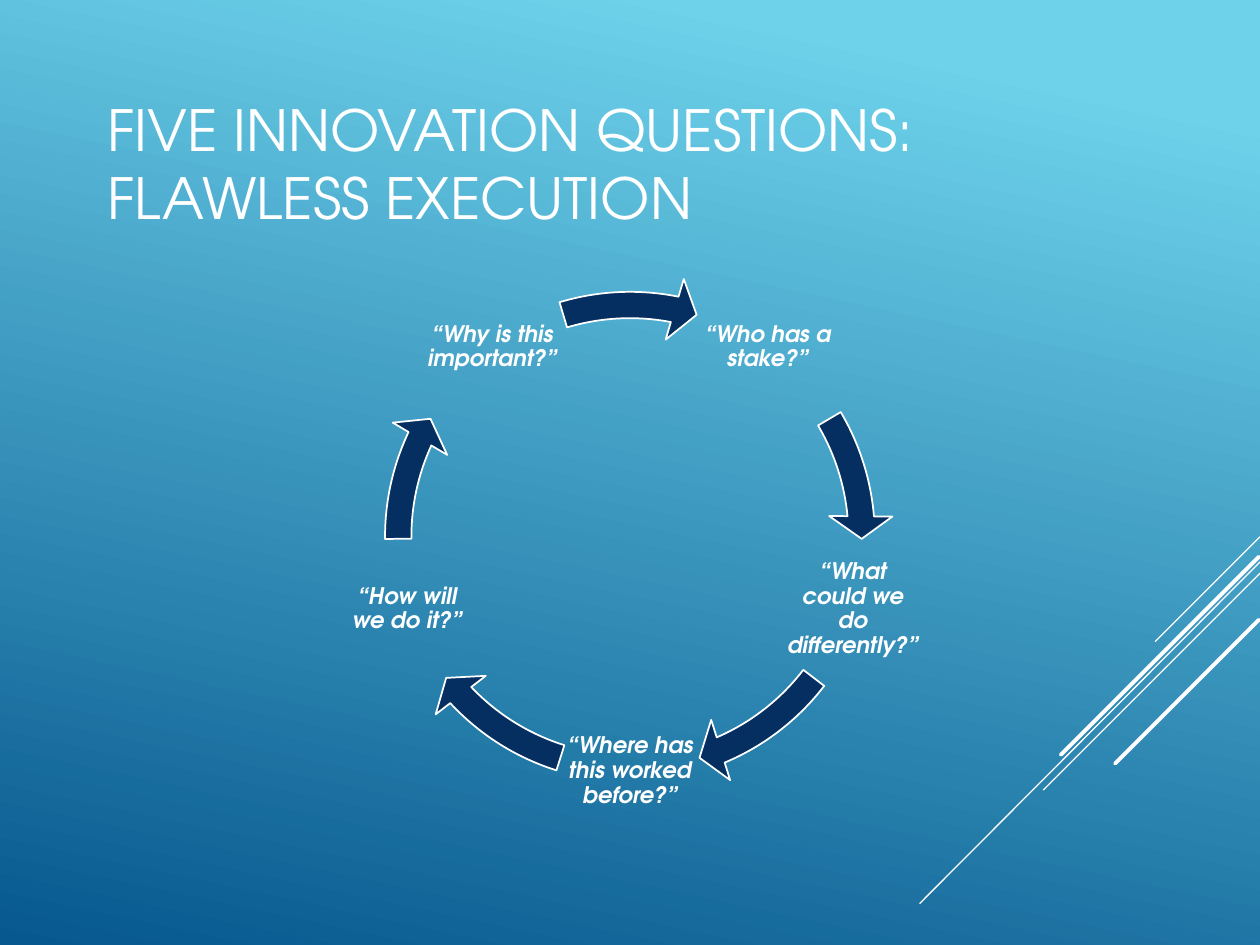
"""Build a slide showing five innovation questions as a clockwise cycle."""
from dataclasses import dataclass
from math import cos, radians, sin

from lxml.etree import SubElement
from pptx import Presentation
from pptx.dml.color import RGBColor
from pptx.enum.shapes import MSO_CONNECTOR, MSO_SHAPE
from pptx.enum.text import MSO_ANCHOR, MSO_AUTO_SIZE, PP_ALIGN
from pptx.oxml.ns import qn
from pptx.util import Inches, Pt


@dataclass(frozen=True)
class Theme:
    font: str = "TeX Gyre Adventor"
    white: RGBColor = RGBColor.from_string("FFFFFF")
    navy: RGBColor = RGBColor.from_string("052F61")
    sky: RGBColor = RGBColor.from_string("6ED2EB")
    ocean: RGBColor = RGBColor.from_string("06588E")
    title_size: float = 32.4
    question_size: float = 13


THEME = Theme()
TITLE = "FIVE INNOVATION QUESTIONS: FLAWLESS EXECUTION"
QUESTIONS = [
    ("“Who has a stake?”", 212.96, 197.64),
    ("“What could we do differently?”", 40.17, 22.51),
    ("“Where has this worked before?”", 82.14, 64.48),
    ("“How will we do it?”", 123.01, 107.69),
    ("“Why is this important?”", 168.68, 151.97),
]
ACCENT_LINES = [
    ((10, 4.26), (9.17, 5.09), 0.75),
    ((10, 4.46), (7.3, 7.17), 0.75),
    ((10, 4.55), (8.28, 6.27), 0.75),
    ((9.99, 4.42), (8.42, 5.99), 2.25),
    ((9.99, 4.92), (8.85, 6.06), 2.25),
]
CENTER_X, CENTER_Y = 5, 4.26
QUESTION_RADIUS, QUESTION_SIDE = 1.86, 1.11
ARROW_SIDE = 4.18
ARROW_THICKNESS, ARROW_HEAD_ANGLE, ARROW_HEAD_WIDTH = 0.05, 3.35, 0.06


def square(center_x, center_y, side):
    return [Inches(value) for value in (center_x - side / 2, center_y - side / 2, side, side)]


def style_text(paragraph, size, emphasis=False):
    for run in paragraph.runs:
        run.font.name = THEME.font
        run.font.size = Pt(size)
        run.font.color.rgb = THEME.white
        run.font.bold = run.font.italic = emphasis


def paint_background(slide):
    fill = slide.background.fill
    fill.gradient()
    fill.gradient_angle = 360 - 102
    for stop, color, position in zip(fill.gradient_stops, (THEME.sky, THEME.ocean), (0.1, 1)):
        stop.color.rgb = color
        stop.position = position


def add_accent_line(slide, start, end, width):
    points = [Inches(value) for value in (*start, *end)]
    connector = slide.shapes.add_connector(MSO_CONNECTOR.STRAIGHT, *points)
    connector.line.color.rgb = THEME.white
    connector.line.width = Pt(width)
    connector.line._get_or_add_ln().set("cap", "rnd")
    SubElement(connector._element.spPr, qn("a:effectLst"))


def write_title(slide):
    title = slide.shapes.title
    title.left, title.top, title.width, title.height = map(Inches, (0.75, 0.67, 8.5, 1.25))
    text_frame = title.text_frame
    text_frame.text = TITLE
    text_frame.auto_size = MSO_AUTO_SIZE.NONE
    text_frame.vertical_anchor = MSO_ANCHOR.MIDDLE
    text_frame.paragraphs[0].alignment = PP_ALIGN.LEFT
    style_text(text_frame.paragraphs[0], THEME.title_size)


def add_question(slide, text, angle):
    center_x = CENTER_X + QUESTION_RADIUS * sin(radians(angle))
    center_y = CENTER_Y - QUESTION_RADIUS * cos(radians(angle))
    text_frame = slide.shapes.add_textbox(*square(center_x, center_y, QUESTION_SIDE)).text_frame
    text_frame.text = text
    text_frame.word_wrap = True
    text_frame.vertical_anchor = MSO_ANCHOR.MIDDLE
    text_frame.margin_left = text_frame.margin_right = Inches(0.02)
    text_frame.margin_top = text_frame.margin_bottom = Inches(0.02)
    paragraph = text_frame.paragraphs[0]
    paragraph.alignment = PP_ALIGN.CENTER
    paragraph.line_spacing = 0.9
    style_text(paragraph, THEME.question_size, emphasis=True)


def add_cycle_arrow(slide, end, start):
    bounds = square(CENTER_X, CENTER_Y, ARROW_SIDE)
    shape = slide.shapes.add_shape(MSO_SHAPE.CIRCULAR_ARROW, *bounds)
    values = (ARROW_THICKNESS, ARROW_HEAD_ANGLE, end, start, ARROW_HEAD_WIDTH)
    for index, value in enumerate(values):
        shape.adjustments[index] = value
    shape.shadow.inherit = False
    shape.fill.solid()
    shape.fill.fore_color.rgb = THEME.navy
    shape.line.color.rgb = THEME.white
    shape.line.width = Pt(1)


def main():
    presentation = Presentation()
    presentation.slide_width, presentation.slide_height = Inches(10), Inches(7.5)
    slide = presentation.slides.add_slide(presentation.slide_layouts[5])
    paint_background(slide)
    for start, end, width in ACCENT_LINES:
        add_accent_line(slide, start, end, width)
    write_title(slide)
    step = 360 / len(QUESTIONS)
    for index, (text, arrow_end, arrow_start) in enumerate(QUESTIONS):
        add_question(slide, text, step * (index + 0.5))
        add_cycle_arrow(slide, arrow_end, arrow_start)
    presentation.save("out.pptx")


if __name__ == "__main__":
    main()
